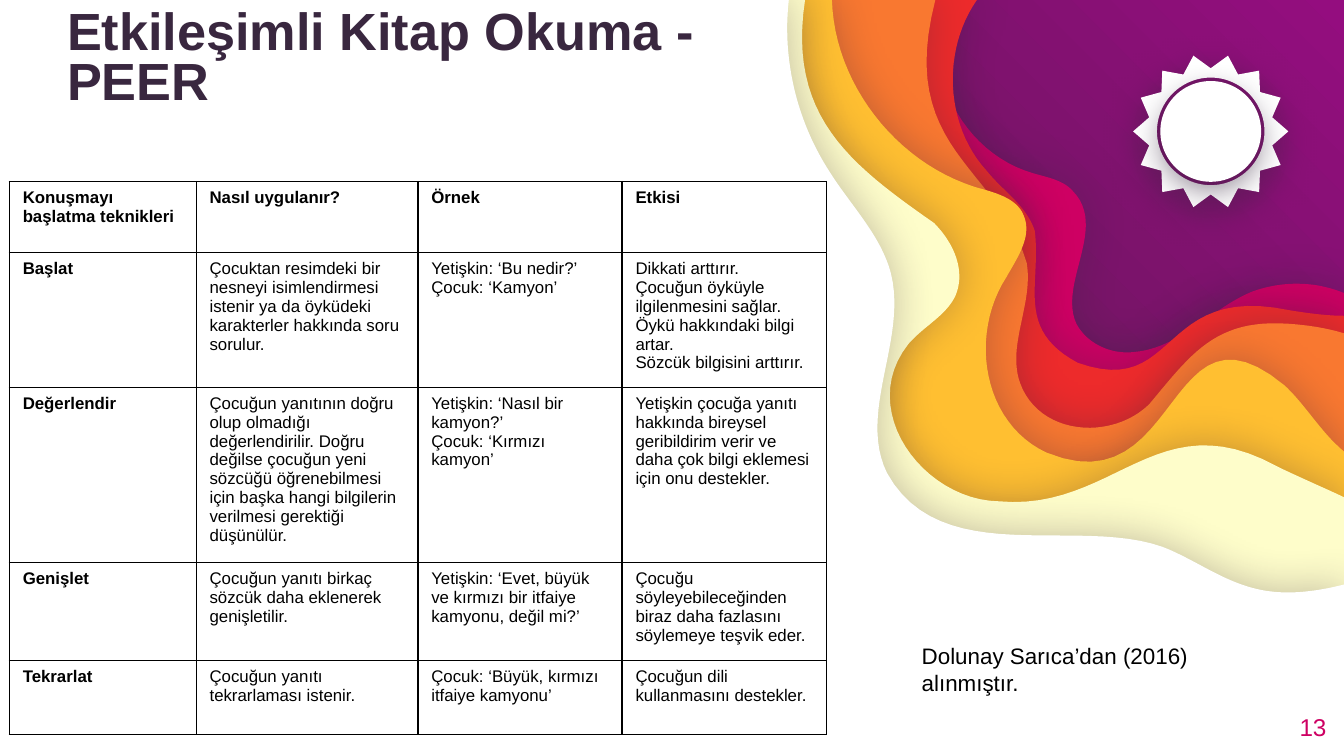
import math

import lxml.etree
import pptx
import pptx.dml.color
import pptx.enum.shapes
import pptx.enum.text
import pptx.oxml
import pptx.util

Pt = pptx.util.Pt
ALIGN = pptx.enum.text.PP_ALIGN
ANCHOR = pptx.enum.text.MSO_ANCHOR
NS = ('xmlns:a="http://schemas.openxmlformats.org/drawingml/2006/main" '
      'xmlns:p="http://schemas.openxmlformats.org/presentationml/2006/main"')
W, H = 720, 405
FONT = "Arial"

COLORS = {
    "bright_purple": "940D7F", "deep_purple": "5E1B53", "ink": "39273F",
    "magenta": "CE0063", "red": "ED2B2B", "orange": "F97830",
    "yellow": "FFBF31", "cream": "FEFDCA", "white": "FFFFFF", "black": "000000",
}

# Wave edges, from the right side to the top: a start, then three points per Bezier
WAVES = [
    ("magenta", [
        (720, 157), (704.2, 150.5), (686.9, 150.5), (671, 156.2),
        (649.4, 164.9), (632.2, 186.5), (607.7, 188.6),
        (595.4, 190.1), (582.5, 184.3), (576.7, 173.5),
        (566.6, 151.9), (594, 121.7), (574.6, 102.2),
        (569.5, 96.5), (560.9, 95), (553.7, 92.9),
        (515.5, 82.1), (492.5, 37.4), (506.9, 0)]),
    ("red", [
        (720, 169.2), (710.6, 169.2), (700.6, 167.8), (691.2, 166.3),
        (619.9, 151.2), (632.2, 213.8), (577.4, 194.4),
        (543.6, 176.4), (558, 152.6), (554.4, 123.8),
        (550.1, 110.2), (537.1, 102.2), (528.5, 91.4),
        (506.2, 67), (504.7, 26.6), (523.4, 0)]),
    ("orange", [
        (720, 178.6), (710.6, 175.7), (700.6, 174.2), (690.5, 173.5),
        (650.9, 170.6), (637.9, 190.1), (615.6, 216.7),
        (595.4, 236.2), (556.6, 233.3), (546.5, 205.2),
        (539.3, 185), (553.7, 162.7), (550.1, 141.1),
        (535, 88.6), (480.2, 80.6), (501.1, 0)]),
    ("yellow", [
        (720, 241.9), (707.8, 231.8), (699.8, 217.4), (688.3, 206.6),
        (624.2, 153.4), (633.6, 272.2), (560.9, 242.6),
        (526.3, 226.8), (519.1, 179.3), (539.3, 148.3),
        (545, 138.2), (553, 126.7), (548.6, 115.9),
        (545, 105.8), (532.1, 103), (522, 100.1),
        (479.5, 86.4), (447.1, 44.6), (445.7, 0)]),
    ("cream", [
        (720, 266.4), (707.8, 260.6), (695.8, 255.6), (684, 249.8),
        (619.9, 214.6), (596.9, 274.3), (535, 268.6),
        (494.6, 267.8), (458.6, 219.6), (486.7, 184.3),
        (494.6, 175), (506.9, 169.2), (511.9, 158.4),
        (517.7, 144.7), (510.5, 129.6), (500.4, 119.5),
        (455, 87.8), (421.9, 61.9), (431.3, 0)]),
    ("white", [
        (720, 313.2), (702.7, 317.5), (684.7, 319.7), (667.4, 313.9),
        (651.6, 308.9), (637.9, 298.8), (622.8, 293),
        (576, 276.5), (504, 305.3), (475.2, 253.4),
        (459.4, 221), (486, 182.2), (477.4, 146.9),
        (472.3, 126.7), (456.5, 110.9), (445, 92.9),
        (427, 65.5), (419, 32.4), (422.6, 0)]),
]

COL_WIDTHS = [100.1, 118.8, 109.4, 109.4]
ROW_HEIGHTS = [38.2, 72, 93.6, 52.6, 39.6]
ROWS = [
    ["Konuşmayı başlatma teknikleri", "Nasıl uygulanır?", "Örnek", "Etkisi"],
    ["Başlat",
     "Çocuktan resimdeki bir nesneyi isimlendirmesi istenir ya da öyküdeki "
     "karakterler hakkında soru sorulur.",
     "Yetişkin: ‘Bu nedir?’\nÇocuk: ‘Kamyon’",
     "Dikkati arttırır.\nÇocuğun öyküyle ilgilenmesini sağlar.\n"
     "Öykü hakkındaki bilgi artar.\nSözcük bilgisini arttırır."],
    ["Değerlendir",
     "Çocuğun yanıtının doğru olup olmadığı değerlendirilir. Doğru değilse "
     "çocuğun yeni sözcüğü öğrenebilmesi için başka hangi bilgilerin "
     "verilmesi gerektiği düşünülür.",
     "Yetişkin: ‘Nasıl bir kamyon?’\nÇocuk: ‘Kırmızı kamyon’",
     "Yetişkin çocuğa yanıtı hakkında bireysel geribildirim verir ve daha "
     "çok bilgi eklemesi için onu destekler."],
    ["Genişlet",
     "Çocuğun yanıtı birkaç sözcük daha eklenerek genişletilir.",
     "Yetişkin: ‘Evet, büyük ve kırmızı bir itfaiye kamyonu, değil mi?’",
     "Çocuğu söyleyebileceğinden biraz daha fazlasını söylemeye teşvik eder."],
    ["Tekrarlat", "Çocuğun yanıtı tekrarlaması istenir.",
     "Çocuk: ‘Büyük, kırmızı itfaiye kamyonu’",
     "Çocuğun dili kullanmasını destekler."],
]


def rgb(name):
    return pptx.dml.color.RGBColor.from_string(COLORS[name])


def set_background(s):
    stops = [(0, "bright_purple"), (50, "deep_purple"), (100, "deep_purple")]
    gs = "".join(f'<a:gs pos="{pos * 1000}"><a:srgbClr val="{COLORS[c]}"/></a:gs>'
                 for pos, c in stops)
    s.element.cSld.insert(0, pptx.oxml.parse_xml(
        f'<p:bg {NS}><p:bgPr><a:gradFill rotWithShape="1"><a:gsLst>{gs}</a:gsLst>'
        '<a:path path="circle"><a:fillToRect l="100000" b="100000"/></a:path>'
        '</a:gradFill><a:effectLst/></p:bgPr></p:bg>'))


def style_shape(sp, color, alpha, blur, dist, angle):
    """Plain fill, no outline and a soft shadow."""
    sp.fill.solid()
    sp.fill.fore_color.rgb = rgb(color)
    sp.line.fill.background()
    sp.shadow.inherit = False
    effects = sp.element.spPr.find(pptx.oxml.ns.qn("a:effectLst"))
    effects.append(pptx.oxml.parse_xml(
        f'<a:outerShdw {NS} blurRad="{Pt(blur)}" dist="{Pt(dist)}" '
        f'dir="{angle * 60000}" algn="ctr" rotWithShape="0">'
        f'<a:srgbClr val="{COLORS["ink"]}"><a:alpha val="{alpha * 1000}"/>'
        '</a:srgbClr></a:outerShdw>'))


def add_outline(s, *contours):
    first, *others = [[(Pt(x), Pt(y)) for x, y in c] for c in contours]
    fb = s.shapes.build_freeform(*first[0])
    fb.add_line_segments(first[1:], close=True)
    for c in others:
        fb.move_to(*c[0])
        fb.add_line_segments(c[1:], close=True)
    return fb.convert_to_shape()


def curve_points(pts, steps=24):
    """Points along a chain of cubic Bezier curves."""
    out = [pts[0]]
    for i in range(0, len(pts) - 1, 3):
        for n in range(1, steps + 1):
            t = n / steps
            weights = ((1 - t) ** 3, 3 * t * (1 - t) ** 2, 3 * t * t * (1 - t), t ** 3)
            out.append(tuple(sum(w * p[k] for w, p in zip(weights, pts[i:i + 4]))
                             for k in (0, 1)))
    return out


def add_wave(s, color, edge):
    sp = add_outline(s, curve_points(edge) + [(0, 0), (0, H), (W, H)])
    style_shape(sp, color, 30, 22.5, 0.8, 0)


def add_badge(s, cx=648.6, cy=70.4, teeth=14, tip=41.6, notch=33.8, hole=28.8, disc=27):
    def ring(radii, count):
        return [(cx + radii[i % len(radii)] * math.sin(math.tau * i / count),
                 cy - radii[i % len(radii)] * math.cos(math.tau * i / count))
                for i in range(count)]

    gear = add_outline(s, ring([notch, tip], 2 * teeth), ring([hole], 100)[::-1])
    circle = s.shapes.add_shape(pptx.enum.shapes.MSO_SHAPE.OVAL, Pt(cx - disc),
                                Pt(cy - disc), Pt(2 * disc), Pt(2 * disc))
    for sp in (gear, circle):
        style_shape(sp, "white", 50, 15.8, 5.2, 90)


def format_text(tf, size, color, bold=False):
    for p in tf.paragraphs:
        for r in p.runs:
            r.font.name, r.font.size, r.font.bold = FONT, Pt(size), bold
            r.font.color.rgb = rgb(color)


def add_text(s, text, box, size, color, bold=False, anchor=ANCHOR.TOP,
             align=ALIGN.LEFT, spacing=None, inset=True):
    tf = s.shapes.add_textbox(*map(Pt, box)).text_frame
    tf.word_wrap, tf.vertical_anchor, tf.text = True, anchor, text
    if not inset:
        tf.margin_left = tf.margin_right = tf.margin_top = tf.margin_bottom = 0
    tf.paragraphs[0].alignment = align
    tf.paragraphs[0].line_spacing = spacing
    format_text(tf, size, color, bold)


def add_borders(cell):
    tcPr = cell._tc.get_or_add_tcPr()
    for i, side in enumerate("LRTB"):
        tcPr.insert(i, pptx.oxml.parse_xml(
            f'<a:ln{side} {NS} w="{Pt(0.75)}"><a:solidFill>'
            f'<a:srgbClr val="{COLORS["black"]}"/></a:solidFill></a:ln{side}>'))


def add_techniques_table(s):
    tbl = s.shapes.add_table(len(ROWS), len(COL_WIDTHS), Pt(5), Pt(97.2),
                             Pt(sum(COL_WIDTHS)), Pt(sum(ROW_HEIGHTS))).table
    tbl.first_row = tbl.horz_banding = False
    for col, width in zip(tbl.columns, COL_WIDTHS):
        col.width = Pt(width)
    for i, (texts, height) in enumerate(zip(ROWS, ROW_HEIGHTS)):
        tbl.rows[i].height = Pt(height)
        for j, text in enumerate(texts):
            cell = tbl.cell(i, j)
            cell.text_frame.text = text
            format_text(cell.text_frame, 9, "black", bold=i == 0 or j == 0)
            cell.fill.background()
            add_borders(cell)


def main():
    prs = pptx.Presentation()
    prs.slide_width, prs.slide_height = Pt(W), Pt(H)
    s = prs.slides.add_slide(prs.slide_layouts[6])

    # Layered paper backdrop
    set_background(s)
    for color, edge in WAVES:
        add_wave(s, color, edge)
    add_badge(s)

    # Title and page number
    add_text(s, "Etkileşimli Kitap Okuma - PEER", (36, 28.1, 410.4, 31), 28, "ink",
             bold=True, anchor=ANCHOR.BOTTOM, spacing=0.8, inset=False)
    add_text(s, "13", (667.4, 373.7, 43.2, 31), 13, "magenta",
             anchor=ANCHOR.MIDDLE, align=ALIGN.RIGHT, inset=False)

    # Techniques and their source
    add_techniques_table(s)
    add_text(s, "Dolunay Sarıca’dan (2016) alınmıştır.", (486.7, 340.6, 211.7, 21.6),
             12, "black")
    prs.save("out.pptx")


if __name__ == "__main__":
    main()
